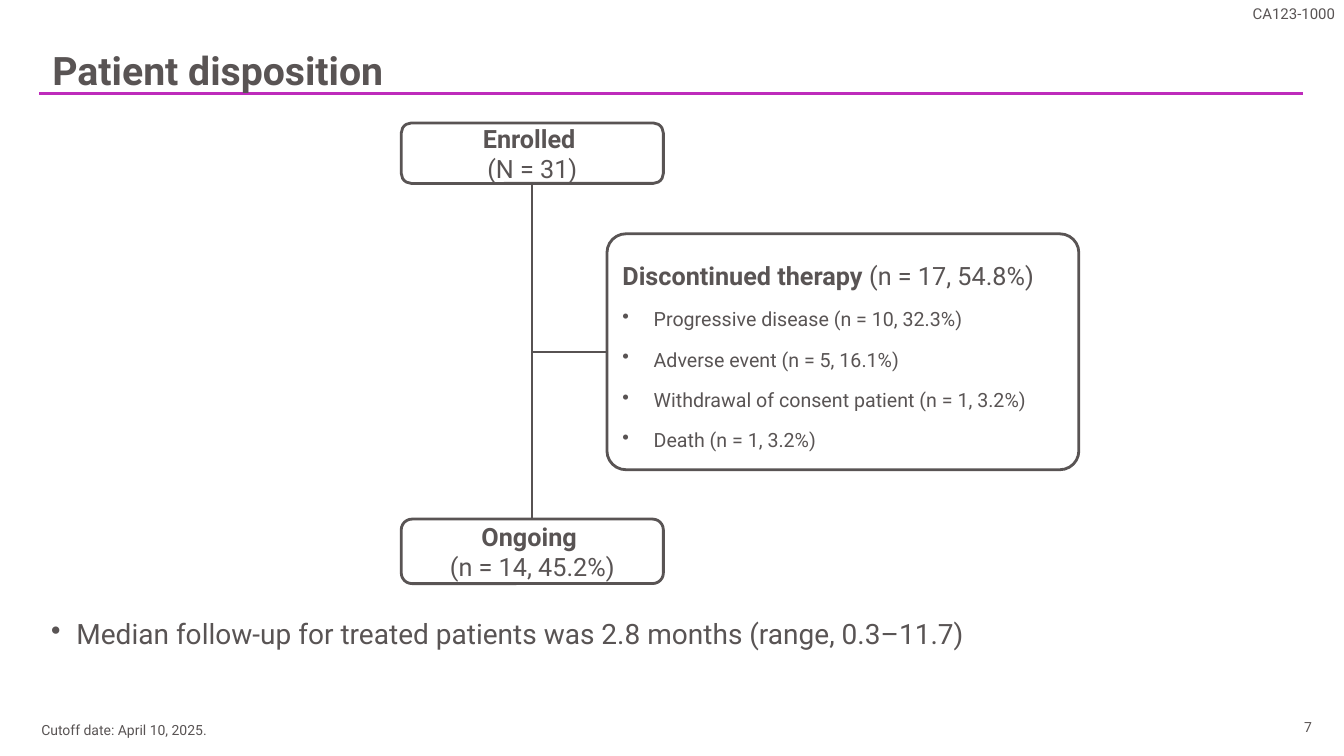
from lxml.etree import SubElement
from pptx import Presentation
from pptx.dml.color import RGBColor
from pptx.enum.shapes import MSO_CONNECTOR, MSO_SHAPE
from pptx.enum.text import MSO_ANCHOR, PP_ALIGN
from pptx.oxml.ns import qn
from pptx.util import Pt

PX = 9144  # 100 px to the inch
FONT = "Roboto"
TEXT = RGBColor(0x59, 0x54, 0x54)
EDGE = RGBColor(0x57, 0x52, 0x52)
RULE = RGBColor(0xBE, 0x2B, 0xBB)
BOTTOM, LEFT, TOP = 2, 1, 0
REASONS = [
    "Progressive disease (n = 10, 32.3%)",
    "Adverse event (n = 5, 16.1%)",
    "Withdrawal of consent patient (n = 1, 3.2%)",
    "Death (n = 1, 3.2%)",
]


def px(*sizes):
    return [size * PX for size in sizes]


def add_run(para, text, size, bold=False):
    run = para.add_run()
    run.text = text
    font = run.font
    font.name, font.size, font.bold = FONT, Pt(size), bold
    font.color.rgb = TEXT


def add_bullet(para, indent):
    props = para._p.get_or_add_pPr()
    props.set("marL", str(indent * PX))
    props.set("indent", str(-indent * PX))
    SubElement(props, qn("a:buChar")).set("char", "•")


def set_frame(shape, anchor, insets):
    """Wrap the text; insets run left, top, right, bottom."""
    frame = shape.text_frame
    frame.word_wrap = True
    frame.vertical_anchor = anchor
    (frame.margin_left, frame.margin_top,
     frame.margin_right, frame.margin_bottom) = px(*insets)
    return frame.paragraphs[0]


def add_label(slide, area, text, size, bold=False, align=PP_ALIGN.LEFT,
              anchor=MSO_ANCHOR.TOP, insets=(10, 5, 10, 5)):
    shape = slide.shapes.add_textbox(*px(*area))
    para = set_frame(shape, anchor, insets)
    para.alignment = align
    add_run(para, text, size, bold)
    return para


def add_box(slide, area, insets, align):
    box = slide.shapes.add_shape(MSO_SHAPE.ROUNDED_RECTANGLE, *px(*area))
    box.shadow.inherit = False
    box.fill.background()
    box.line.color.rgb = TEXT
    box.line.width = Pt(2)
    para = set_frame(box, MSO_ANCHOR.MIDDLE, insets)
    para.alignment = align
    return box, para


def add_stage(slide, top, height, name, count):
    box, para = add_box(slide, (398, top, 260, height), (10, 20, 10, 20),
                        PP_ALIGN.CENTER)
    add_run(para, name + " ", 18, True)
    para.add_line_break()
    add_run(para, count, 18)
    return box


def add_exits(slide):
    """Box that lists why patients left therapy."""
    box, para = add_box(slide, (602, 232, 468, 234), (10, 13, 10, 5),
                        PP_ALIGN.LEFT)
    box.adjustments[0] = 0.08
    para.space_after = Pt(6)
    add_run(para, "Discontinued therapy ", 18, True)
    add_run(para, "(n = 17, 54.8%)", 18)
    for reason in REASONS:
        para = box.text_frame.add_paragraph()
        add_bullet(para, 31)
        para.alignment = PP_ALIGN.LEFT
        para.space_before = para.space_after = Pt(6)
        add_run(para, reason, 14)
    return box


def add_line(slide, ends, color, width):
    line = slide.shapes.add_connector(MSO_CONNECTOR.STRAIGHT, *px(*ends))
    line.line.color.rgb = color
    line.line.width = Pt(width)
    SubElement(line._element.spPr, qn("a:effectLst"))
    return line


def main():
    deck = Presentation()
    deck.slide_width, deck.slide_height = px(1333, 750)
    slide = deck.slides.add_slide(deck.slide_layouts[6])

    add_line(slide, (39, 93, 1292, 93), RULE, 2.25)
    add_label(slide, (1016, 0, 318, 28), "CA123-1000", 10.7,
              align=PP_ALIGN.RIGHT)
    title = add_label(slide, (47, 15, 1190, 83), "Patient disposition", 28,
                      True, anchor=MSO_ANCHOR.BOTTOM, insets=(5, 5, 5, 5))
    title.line_spacing = 0.9
    add_label(slide, (1239, 701, 72, 40), "7", 10, align=PP_ALIGN.RIGHT,
              anchor=MSO_ANCHOR.MIDDLE)
    add_label(slide, (41, 715, 1226, 17), "Cutoff date: April 10, 2025.", 10,
              anchor=MSO_ANCHOR.BOTTOM, insets=(0, 0, 0, 0))

    start = add_stage(slide, 122, 60, "Enrolled", "(N = 31)")
    end = add_stage(slide, 515, 64, "Ongoing", "(n = 14, 45.2%)")
    exits = add_exits(slide)
    stem = add_line(slide, (528, 182, 528, 515), EDGE, 1.5)
    stem.begin_connect(start, BOTTOM)
    stem.end_connect(end, TOP)
    branch = add_line(slide, (602, 349, 528, 349), EDGE, 1.5)
    branch.begin_connect(exits, LEFT)

    note = add_label(
        slide, (41, 607, 1157, 44),
        "Median follow-up for treated patients was 2.8 months "
        "(range, 0.3–11.7)", 20)
    add_bullet(note, 25)
    deck.save("out.pptx")


if __name__ == "__main__":
    main()
